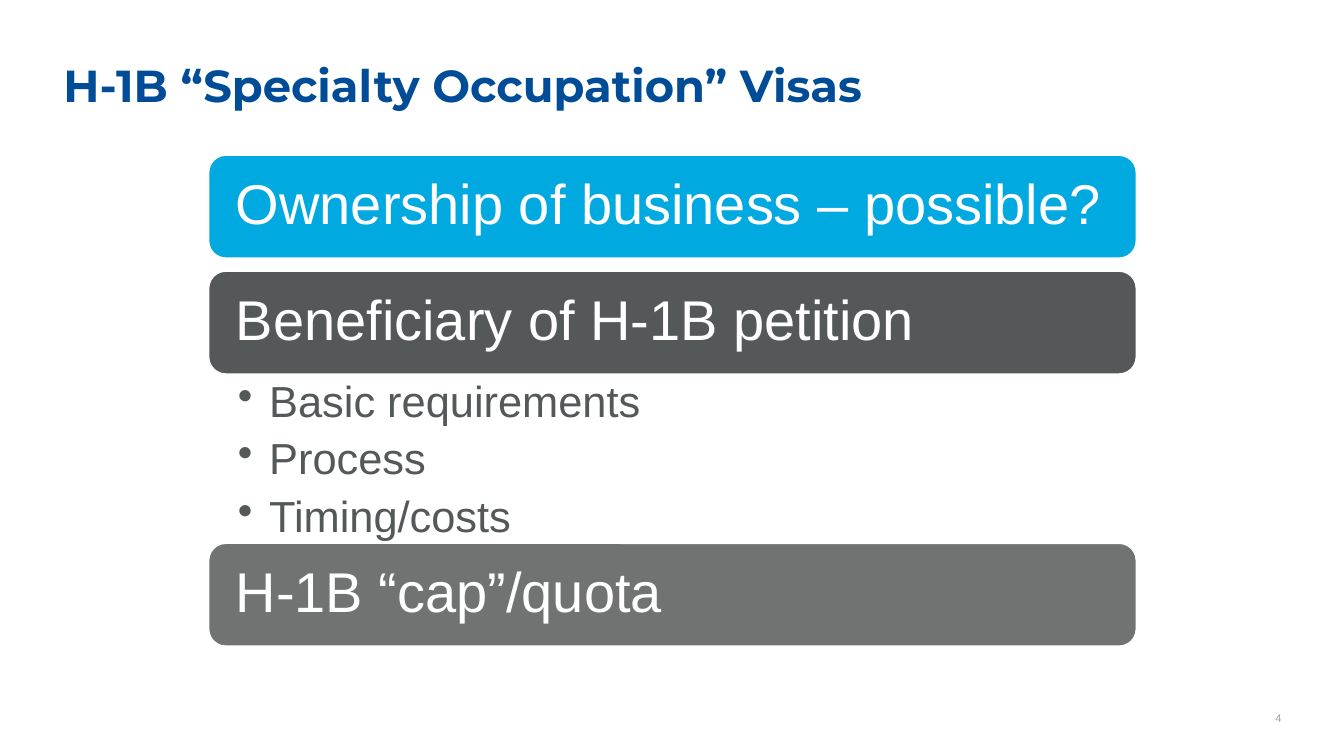
from lxml.etree import SubElement
from pptx import Presentation
from pptx.dml.color import RGBColor
from pptx.enum.shapes import MSO_SHAPE as Shape
from pptx.enum.text import MSO_ANCHOR as Anchor, PP_ALIGN as Align
from pptx.oxml.ns import qn
from pptx.util import Inches, Pt

WHITE = RGBColor(0xFF, 0xFF, 0xFF)
NAVY = RGBColor(0x00, 0x4C, 0x97)
CYAN = RGBColor(0x00, 0xA9, 0xE0)
SLATE = RGBColor(0x54, 0x58, 0x59)
GREY = RGBColor(0x70, 0x73, 0x72)
PALE = RGBColor(0xA8, 0xA2, 0xA2)

LEFT, WIDTH, HIGH = 2.07, 9.2, 1.02
BARS = [
    (1.54, CYAN, "Ownership of business – possible?"),
    (2.69, SLATE, "Beneficiary of H-1B petition"),
    (5.39, GREY, "H-1B “cap”/quota"),
]
POINTS = ["Basic requirements", "Process", "Timing/costs"]


class Page:
    def __init__(self, deck, font="Arial", lead=0.9):
        self.slide = deck.slides.add_slide(deck.slide_layouts[6])
        self.font, self.lead = font, lead

    def label(self, shape, text, size, color, pad=(0, 0, 0, 0),
              anchor=Anchor.TOP, align=Align.LEFT, font=None, bold=False):
        """Set and format the text of a shape; pad is left, top, right, bottom."""
        frame = shape.text_frame
        frame.text = text
        frame.word_wrap = True
        frame.vertical_anchor = anchor
        (frame.margin_left, frame.margin_top,
         frame.margin_right, frame.margin_bottom) = map(Inches, pad)
        for para in frame.paragraphs:
            para.alignment = align
            para.line_spacing = self.lead
            for run in para.runs:
                run.font.name = font or self.font
                run.font.size = Pt(size)
                run.font.bold = bold
                run.font.color.rgb = color

    def text(self, box, text, size, color, **style):
        shape = self.slide.shapes.add_textbox(*map(Inches, box))
        self.label(shape, text, size, color, **style)
        return shape

    def bar(self, top, fill, text):
        box = map(Inches, (LEFT, top, WIDTH, HIGH))
        shape = self.slide.shapes.add_shape(Shape.ROUNDED_RECTANGLE, *box)
        shape.shadow.inherit = False
        shape.fill.solid()
        shape.fill.fore_color.rgb = fill
        shape.line.color.rgb = WHITE
        shape.line.width = Pt(1)
        self.label(shape, text, 40, WHITE, pad=(0.22,) * 4, anchor=Anchor.MIDDLE)

    def bullets(self, box, items, size, color, indent=0.31):
        shape = self.text(box, "\n".join(items), size, color,
                          pad=(0.29, 0.06, 0.31, 0.06))
        for para in shape.text_frame.paragraphs:
            para.space_after = Pt(7.5)
            props = para._p.get_or_add_pPr()
            props.set("marL", str(Inches(indent)))
            props.set("indent", str(-Inches(indent)))
            SubElement(props, qn("a:buChar")).set("char", "•")


def main():
    deck = Presentation()
    deck.slide_width, deck.slide_height = Inches(13.33), Inches(7.5)
    page = Page(deck)
    page.text((0.63, 0.63, 12.07, 0.5), "H-1B “Specialty Occupation” Visas",
              32, NAVY, font="Montserrat", bold=True)
    for top, fill, text in BARS:
        page.bar(top, fill, text)
    page.bullets((LEFT, 3.71, WIDTH, 1.68), POINTS, 31, SLATE)
    page.text((11.99, 7.07, 0.72, 0.2), "4", 8, PALE, align=Align.RIGHT)
    deck.save("out.pptx")


if __name__ == "__main__":
    main()
